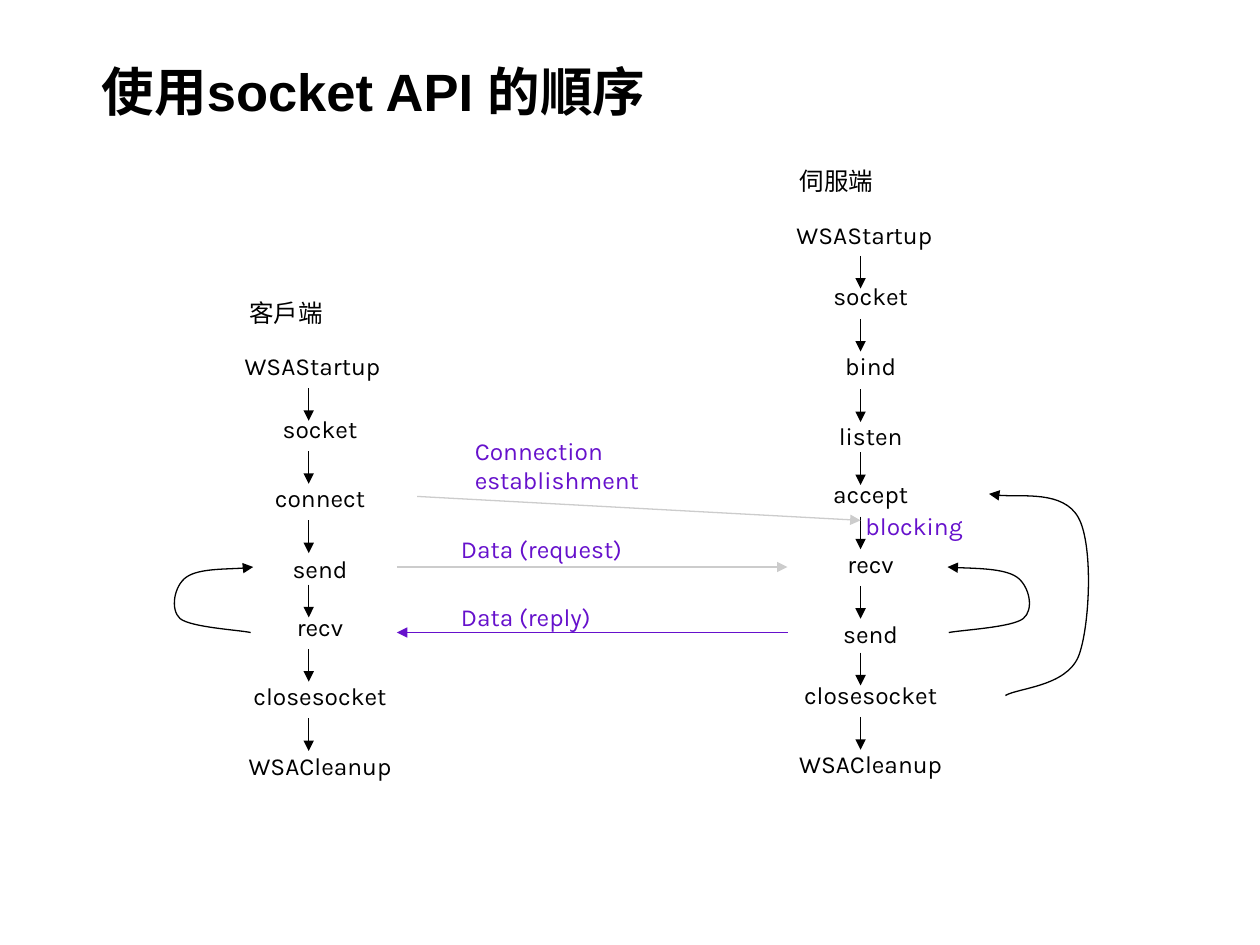
from typing import NamedTuple, Optional

from lxml.etree import SubElement
from pptx import Presentation
from pptx.dml.color import RGBColor
from pptx.enum.text import MSO_ANCHOR as Anchor, PP_ALIGN as Align
from pptx.enum.shapes import MSO_CONNECTOR as Connector
from pptx.oxml.ns import qn
from pptx.util import Inches, Pt

COLORS = {"black": "000000", "purple": "6611CC", "gray": "CCCCCC"}
STEP_W, STEP_H, ARROW_H = 2.38, 0.36, 0.26


class Step(NamedTuple):
    label: str
    top: float
    arrow_top: Optional[float] = None


class Column(NamedTuple):
    left: float
    first_left: float
    arrow_x: float
    steps: list


class Label(NamedTuple):
    text: str
    box: tuple
    color: str


class Arrow(NamedTuple):
    start: tuple
    end: tuple
    color: str = "black"


CLIENT = Column(1.35, 1.29, 2.45, [
    Step("WSAStartup", 2.72, 3.08),
    Step("socket", 3.22, 3.58),
    Step("connect", 3.77, 4.13),
    Step("send", 4.33, 4.64),
    Step("recv", 4.79, 5.15),
    Step("closesocket", 5.34, 5.7),
    Step("WSACleanup", 5.9),
])
SERVER = Column(5.72, 5.67, 6.83, [
    Step("WSAStartup", 1.68, 2.03),
    Step("socket", 2.17, 2.53),
    Step("bind", 2.72, 3.09),
    Step("listen", 3.28, 3.59),
    Step("accept", 3.74, 4.1),
    Step("recv", 4.29, 4.65),
    Step("send", 4.85, 5.18),
    Step("closesocket", 5.33, 5.69),
    Step("WSACleanup", 5.88),
])
# Each loop is a start point followed by three points per Bezier curve.
LOOPS = [
    [(1.99, 5.02), (1.9, 5), (1.52, 4.98), (1.43, 4.91),
     (1.35, 4.84), (1.38, 4.65), (1.48, 4.58),
     (1.58, 4.51), (1.9, 4.52), (2.01, 4.5)],
    [(7.53, 5.02), (7.63, 5), (8.03, 4.98), (8.12, 4.91),
     (8.21, 4.84), (8.17, 4.65), (8.07, 4.58),
     (7.97, 4.51), (7.63, 4.51), (7.52, 4.5)],
    [(7.98, 5.52), (8.08, 5.46), (8.46, 5.45), (8.56, 5.21),
     (8.65, 4.98), (8.68, 4.33), (8.56, 4.11),
     (8.44, 3.89), (8, 3.96), (7.85, 3.92)],
]
MESSAGES = [
    Arrow((3.15, 4.5), (6.25, 4.5), "gray"),
    Arrow((6.25, 5.02), (3.15, 5.02), "purple"),
    Arrow((3.31, 3.94), (6.83, 4.13), "gray"),
]
LABELS = [
    Label("客戶端", (1.88, 2.32, 0.95, 0.4), "black"),
    Label("伺服端", (6.25, 1.27, 0.95, 0.4), "black"),
    Label("blocking", (6.77, 4.01, 1.11, 0.4), "purple"),
    Label("Connection\nestablishment", (3.67, 3.41, 1.73, 0.7), "purple"),
    Label("Data (request)", (3.56, 4.19, 1.81, 0.4), "purple"),
    Label("Data (reply)", (3.56, 4.73, 1.53, 0.4), "purple"),
]


def add_text(slide, text: str, box: tuple, color: str = "black", font: str = "Karla",
             size: int = 14, bold: bool = False, align=Align.LEFT, anchor=Anchor.TOP):
    tf = slide.shapes.add_textbox(*map(Inches, box)).text_frame
    tf.word_wrap = False
    tf.vertical_anchor = anchor
    tf.text = text
    for p in tf.paragraphs:
        p.alignment = align
        p.font.name, p.font.size, p.font.bold = font, Pt(size), bold
        p.font.color.rgb = RGBColor.from_string(COLORS[color])
    return tf


def style_arrow(sp, color: str) -> None:
    """Set the line and its end arrowhead, and clear the shadow."""
    sp.line.color.rgb = RGBColor.from_string(COLORS[color])
    sp.line.width = Pt(0.75)
    SubElement(sp.line._get_or_add_ln(), qn("a:tailEnd"), type="triangle")
    SubElement(sp._element.spPr, qn("a:effectLst"))


def add_arrow(slide, arrow: Arrow) -> None:
    ends = map(Inches, arrow.start + arrow.end)
    style_arrow(slide.shapes.add_connector(Connector.STRAIGHT, *ends), arrow.color)


def add_loop(slide, points: list) -> None:
    """Draw the points as a polyline, then turn each three segments into a curve."""
    start, *rest = [(Inches(x), Inches(y)) for x, y in points]
    builder = slide.shapes.build_freeform(*start)
    builder.add_line_segments(rest, close=False)
    sp = builder.convert_to_shape()
    sp.fill.background()
    style_arrow(sp, "black")
    outline = next(sp._element.iter(qn("a:path")))
    segments = outline.findall(qn("a:lnTo"))
    for i in range(0, len(segments), 3):
        curve = SubElement(outline, qn("a:cubicBezTo"))
        for segment in segments[i:i + 3]:
            curve.append(segment[0])
            outline.remove(segment)


def add_column(slide, column: Column) -> None:
    for i, step in enumerate(column.steps):
        left = column.left if i else column.first_left
        add_text(slide, step.label, (left, step.top, STEP_W, STEP_H),
                 align=Align.CENTER, anchor=Anchor.MIDDLE)
        if step.arrow_top is not None:
            x, y = column.arrow_x, step.arrow_top
            add_arrow(slide, Arrow((x, y), (x, y + ARROW_H)))


def add_title(slide) -> None:
    tf = add_text(slide, "使用socket API 的順序", (0.46, 0.45, 9.32, 0.62),
                  font="Arial", size=30, bold=True, anchor=Anchor.BOTTOM)
    tf.word_wrap = True
    tf.margin_top = tf.margin_bottom = Inches(0.1)
    tf.paragraphs[0]._p.get_or_add_pPr().set("indent", str(Inches(0.25)))


def main() -> None:
    prs = Presentation()
    prs.slide_width, prs.slide_height = Inches(10), Inches(7.5)
    slide = prs.slides.add_slide(prs.slide_layouts[6])
    add_title(slide)
    for column in (CLIENT, SERVER):
        add_column(slide, column)
    for loop in LOOPS:
        add_loop(slide, loop)
    for message in MESSAGES:
        add_arrow(slide, message)
    for label in LABELS:
        add_text(slide, *label)
    prs.save("out.pptx")


if __name__ == "__main__":
    main()
